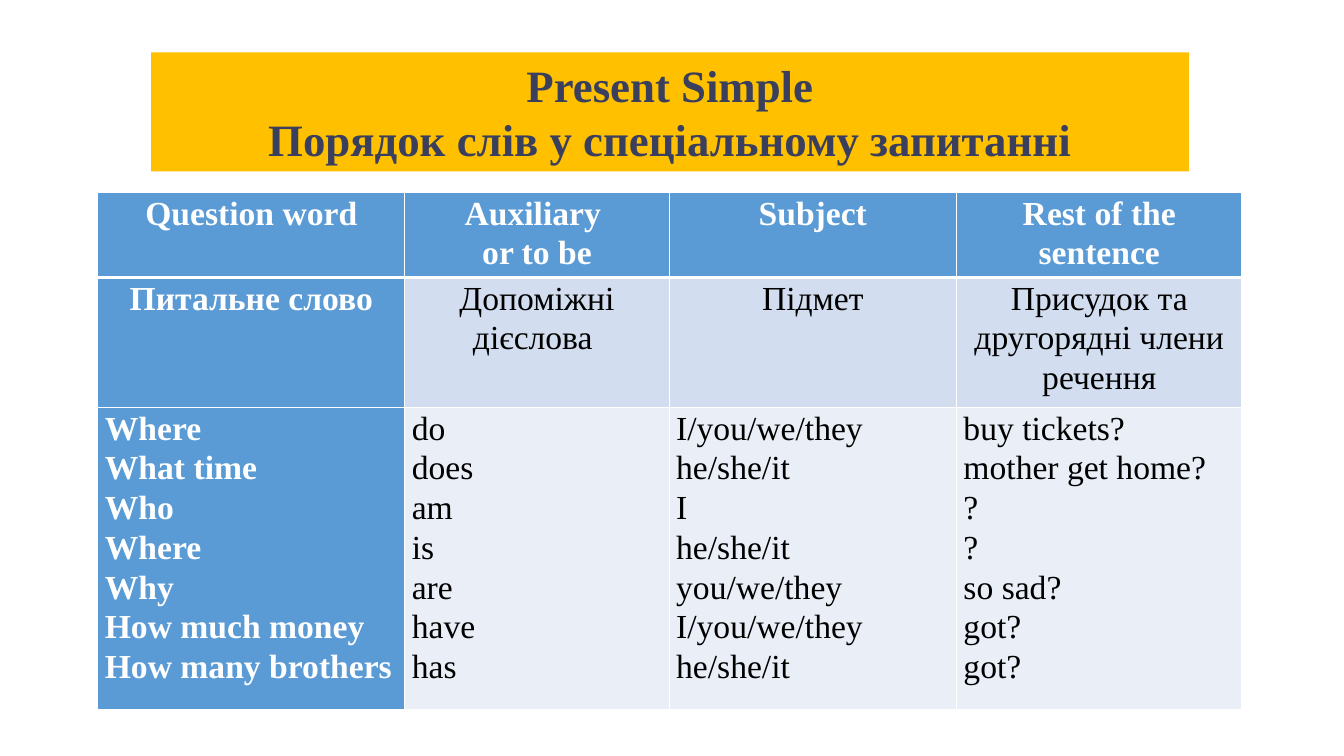
import pptx
import pptx.dml.color
import pptx.enum.shapes
import pptx.enum.text
import pptx.oxml
import pptx.oxml.ns
import pptx.util

SLIDE_WIDTH = pptx.util.Inches(13.33)
SLIDE_HEIGHT = pptx.util.Inches(7.5)
FONT = "Times New Roman"
WHITE, BLACK, BLUE = "FFFFFF", "000000", "5B9BD5"
CENTER = pptx.enum.text.PP_ALIGN.CENTER
LEFT = pptx.enum.text.PP_ALIGN.LEFT

# Table geometry, in percent of the slide's width and height
COLUMN_WIDTHS = [22.84, 19.67, 21.38, 21.25]
ROW_HEIGHTS = [11.25, 17.2, 40]
BODY_FILLS = [BLUE, "D2DEEF", "EAEFF7"]

# One list of rows; each cell is a list of paragraphs
ROWS = [
    [["Question word"], ["Auxiliary ", "or to be"], ["Subject"], ["Rest of the sentence"]],
    [["Питальне слово"], ["Допоміжні дієслова "], ["Підмет"],
     ["Присудок та другорядні члени речення"]],
    [["Where", "What time", "Who", "Where", "Why", "How much money", "How many brothers"],
     ["do", "does", "am", "is", "are", "have", "has"],
     ["I/you/we/they", "he/she/it", "I", "he/she/it", "you/we/they", "I/you/we/they",
      "he/she/it"],
     ["buy tickets?", "mother get home?", "?", "?", "so sad?", "got?", "got?"]],
]


def across(percent):
    return int(SLIDE_WIDTH * percent / 100)


def down(percent):
    return int(SLIDE_HEIGHT * percent / 100)


def color(value):
    return pptx.dml.color.RGBColor.from_string(value)


def paint(target, value):
    target.fill.solid()
    target.fill.fore_color.rgb = color(value)


def write(text_frame, lines, size, text_color, bold, alignment, line_spacing=1.0):
    text_frame.word_wrap = True
    text_frame.text = "\n".join(lines)
    for paragraph in text_frame.paragraphs:
        paragraph.alignment = alignment
        paragraph.line_spacing = line_spacing
        for run in paragraph.runs:
            run.font.name = FONT
            run.font.size = pptx.util.Pt(size)
            run.font.bold = bold
            run.font.color.rgb = color(text_color)


def set_borders(cell, top, bottom):
    """Draw white cell borders; top and bottom widths are in points."""
    properties = cell._tc.get_or_add_tcPr()
    widths = {"lnL": 1, "lnR": 1, "lnT": top, "lnB": bottom}
    for position, (side, width) in enumerate(widths.items()):
        border = pptx.oxml.parse_xml(
            f'<a:{side} {pptx.oxml.ns.nsdecls("a")} w="{pptx.util.Pt(width)}">'
            f'<a:solidFill><a:srgbClr val="{WHITE}"/></a:solidFill></a:{side}>')
        properties.insert(position, border)


def add_banner(slide, lines):
    banner = slide.shapes.add_shape(
        pptx.enum.shapes.MSO_SHAPE.RECTANGLE,
        across(11.25), down(6.93), across(77.2), down(15.73))
    banner.shadow.inherit = False
    banner.line.fill.background()
    paint(banner, "FFC000")
    write(banner.text_frame, lines, 32, "3A3F5D", True, CENTER)


def format_cell(cell, lines, row, column):
    emphasized = row == 0 or column == 0
    paint(cell, BLUE if emphasized else BODY_FILLS[row])
    cell.margin_left = cell.margin_right = pptx.util.Inches(0.07)
    cell.margin_top = cell.margin_bottom = 0
    write(cell.text_frame, lines, 24, WHITE if emphasized else BLACK, emphasized,
          CENTER if row < 2 else LEFT, 1.07)
    set_borders(cell, top=3 if row == 1 else 1, bottom=3 if row == 0 else 1)


def add_word_order_table(slide):
    table = slide.shapes.add_table(
        len(ROWS), len(COLUMN_WIDTHS), across(7.28), down(25.47),
        across(sum(COLUMN_WIDTHS)), down(sum(ROW_HEIGHTS))).table
    table.first_col = True
    for column, width in zip(table.columns, COLUMN_WIDTHS):
        column.width = across(width)
    for row, height in zip(table.rows, ROW_HEIGHTS):
        row.height = down(height)
    for row, cells in enumerate(ROWS):
        for column, lines in enumerate(cells):
            format_cell(table.cell(row, column), lines, row, column)


def main():
    presentation = pptx.Presentation()
    presentation.slide_width = SLIDE_WIDTH
    presentation.slide_height = SLIDE_HEIGHT
    slide = presentation.slides.add_slide(presentation.slide_layouts[6])
    add_banner(slide, ["Present Simple", "Порядок слів у спеціальному запитанні"])
    add_word_order_table(slide)
    presentation.save("out.pptx")


if __name__ == "__main__":
    main()
